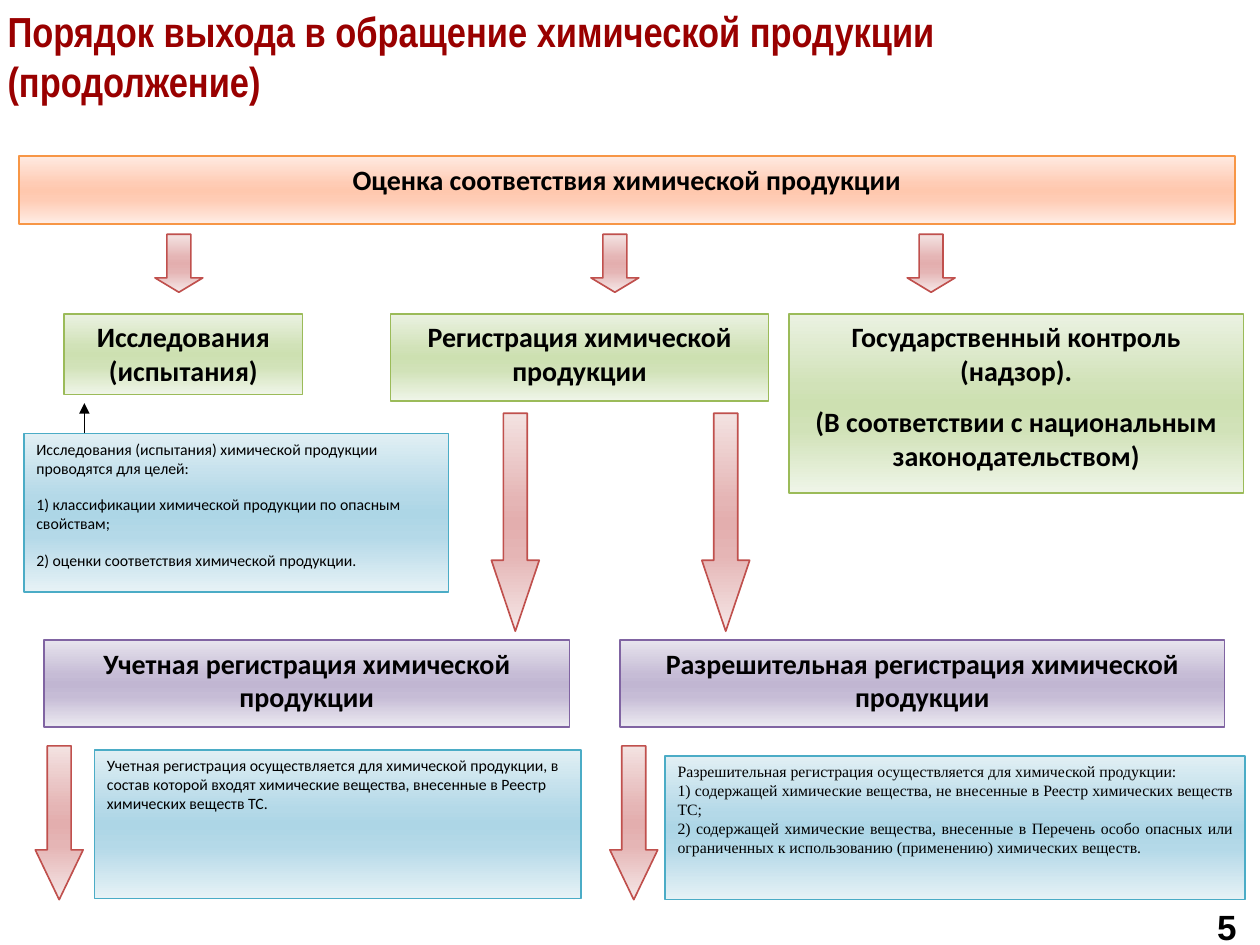
from dataclasses import dataclass
from lxml.etree import SubElement
from pptx import Presentation
from pptx.dml.color import RGBColor
from pptx.enum.shapes import MSO_CONNECTOR, MSO_SHAPE
from pptx.enum.text import MSO_ANCHOR, MSO_AUTO_SIZE, PP_ALIGN
from pptx.oxml.ns import qn
from pptx.util import Inches, Pt


@dataclass(frozen=True)
class Tone:
    line: str
    stops: tuple


@dataclass(frozen=True)
class Theme:
    orange: Tone = Tone("F79646", ("FFEAE1", "FFCCB5", "FFC8AE", "FFCCB5", "FFEEE7"))
    red: Tone = Tone("C0504D", ("F3E2E1", "E5B5B5", "E3AEAE", "E5B5B5", "F5E8E8"))
    green: Tone = Tone("9BBB59", ("EBF2E2", "D1E2B8", "CDE0B1", "D1E2B8", "EFF5E8"))
    purple: Tone = Tone("8064A2", ("E7E4ED", "C6BCD6", "C1B6D2", "C6BCD6", "ECEAF1"))
    blue: Tone = Tone("4BACC6", ("E1EFF4", "B4D9E8", "ADD6E6", "B4D9E8", "E7F2F6"))
    stop_positions: tuple = (0, 40, 50, 65, 100)
    title_color: str = "990000"
    ink: str = "000000"
    title_font: str = "Arial Narrow"
    body_font: str = "Calibri"
    legal_font: str = "Times New Roman"
    number_font: str = "Arial"
    title_size: int = 24
    number_size: int = 20
    heading_size: int = 16
    note_size: int = 9
    paragraph_gap: int = 10
    outline: float = 0.94
    thin_line: float = 0.75


class SlideBuilder:
    def __init__(self, slide, theme):
        self.slide = slide
        self.theme = theme

    def add_run(self, paragraph, text, size, font, color, bold):
        run = paragraph.add_run()
        run.text = text
        run.font.size = Pt(size)
        run.font.name = font
        run.font.bold = bold
        run.font.color.rgb = RGBColor.from_string(color)

    def title(self, lines, left, top, width, height):
        title = self.slide.shapes.title
        title.left, title.top = Inches(left), Inches(top)
        title.width, title.height = Inches(width), Inches(height)
        frame = title.text_frame
        frame.word_wrap = True
        frame.auto_size = MSO_AUTO_SIZE.NONE
        frame.vertical_anchor = MSO_ANCHOR.MIDDLE
        paragraph = frame.paragraphs[0]
        paragraph.alignment = PP_ALIGN.LEFT
        for index, line in enumerate(lines):
            if index:
                paragraph.add_line_break()
            self.add_run(paragraph, line, self.theme.title_size, self.theme.title_font,
                         self.theme.title_color, True)

    def panel(self, kind, tone, left, top, width, height, adjustments=()):
        panel = self.slide.shapes.add_shape(
            kind, Inches(left), Inches(top), Inches(width), Inches(height))
        panel.shadow.inherit = False
        for index, value in enumerate(adjustments):
            panel.adjustments[index] = value
        panel.line.color.rgb = RGBColor.from_string(tone.line)
        panel.line.width = Pt(self.theme.outline)
        panel.fill.gradient()
        panel.fill.gradient_angle = 270
        stop_list = panel.element.spPr.find(qn("a:gradFill")).find(qn("a:gsLst"))
        for stop in list(stop_list):
            stop_list.remove(stop)
        for position, color in zip(self.theme.stop_positions, tone.stops):
            stop = SubElement(stop_list, qn("a:gs"), pos=str(position * 1000))
            SubElement(stop, qn("a:srgbClr"), val=color)
        return panel

    def add_texts(self, panel, texts, size, font, bold, alignment, gap):
        frame = panel.text_frame
        frame.word_wrap = True
        frame.vertical_anchor = MSO_ANCHOR.TOP
        for index, text in enumerate(texts):
            paragraph = frame.add_paragraph() if index else frame.paragraphs[0]
            paragraph.alignment = alignment
            paragraph.space_after = Pt(gap)
            self.add_run(paragraph, text, size, font, self.theme.ink, bold)

    def heading(self, tone, box, *texts):
        panel = self.panel(MSO_SHAPE.FLOWCHART_PROCESS, tone, *box)
        self.add_texts(panel, texts, self.theme.heading_size, self.theme.body_font,
                       True, PP_ALIGN.CENTER, self.theme.paragraph_gap)

    def note(self, kind, box, *texts, adjustments=()):
        panel = self.panel(kind, self.theme.blue, *box, adjustments)
        self.add_texts(panel, texts, self.theme.note_size, self.theme.body_font,
                       False, PP_ALIGN.LEFT, self.theme.paragraph_gap)

    def legal_note(self, box, *texts):
        panel = self.panel(MSO_SHAPE.WAVE, self.theme.blue, *box, (0, 0))
        self.add_texts(panel, texts, self.theme.note_size, self.theme.legal_font,
                       False, PP_ALIGN.JUSTIFY, 0)

    def down_arrows(self, lefts, top, height, head):
        for left in lefts:
            self.panel(MSO_SHAPE.DOWN_ARROW, self.theme.red, left, top, 0.38, height,
                       (0.5, head))

    def pointer(self, x, start, end):
        pointer = self.slide.shapes.add_connector(
            MSO_CONNECTOR.STRAIGHT, Inches(x), Inches(start), Inches(x), Inches(end))
        pointer.line.color.rgb = RGBColor.from_string(self.theme.ink)
        pointer.line.width = Pt(self.theme.thin_line)
        properties = pointer.element.spPr
        SubElement(properties.find(qn("a:ln")), qn("a:tailEnd"), type="triangle")
        SubElement(properties, qn("a:effectLst"))

    def page_number(self, text, left, top, width, height):
        number = self.slide.shapes.add_textbox(
            Inches(left), Inches(top), Inches(width), Inches(height))
        number.text_frame.margin_left = Inches(0.25)
        self.add_texts(number, [text], self.theme.number_size, self.theme.number_font,
                       True, PP_ALIGN.LEFT, 0)


def main():
    deck = Presentation()
    deck.slide_width, deck.slide_height = Inches(10), Inches(7.5)
    theme = Theme()
    page = SlideBuilder(deck.slides.add_slide(deck.slide_layouts[5]), theme)

    page.title(["Порядок выхода в обращение химической продукции", "(продолжение)"],
               -0.04, -0.03, 7.67, 0.94)
    page.heading(theme.orange, (0.15, 1.24, 9.65, 0.54),
                 "Оценка соответствия химической продукции")
    page.down_arrows((1.23, 4.69, 7.2), 1.86, 0.46, 0.3)

    page.heading(theme.green, (0.51, 2.49, 1.89, 0.64), "Исследования (испытания)")
    page.heading(theme.green, (3.1, 2.49, 3, 0.69), "Регистрация химической продукции")
    page.heading(theme.green, (6.26, 2.49, 3.61, 1.42),
                 "Государственный контроль (надзор).",
                 "(В соответствии с национальным законодательством)")

    page.note(MSO_SHAPE.RECTANGLE, (0.19, 3.44, 3.37, 1.26),
              "Исследования (испытания) химической продукции проводятся для целей:",
              "1) классификации химической продукции по опасным свойствам;",
              "2) оценки соответствия химической продукции.")
    page.pointer(0.67, 3.44, 3.2)
    page.down_arrows((3.9, 5.57), 3.28, 1.73, 1.48)

    page.heading(theme.purple, (0.35, 5.08, 4.17, 0.69),
                 "Учетная регистрация химической продукции")
    page.heading(theme.purple, (4.92, 5.08, 4.8, 0.69),
                 "Разрешительная регистрация химической продукции")
    page.down_arrows((0.28, 4.84), 5.92, 1.22, 1.04)

    page.note(MSO_SHAPE.WAVE, (0.75, 5.95, 3.86, 1.18),
              "Учетная регистрация осуществляется для химической продукции, в состав "
              "которой входят химические вещества, внесенные в Реестр химических веществ ТС.",
              adjustments=(0, 0))
    page.legal_note((5.28, 6, 4.6, 1.14),
                    "Разрешительная регистрация осуществляется для химической продукции:",
                    "1) содержащей химические вещества, не внесенные в Реестр химических "
                    "веществ ТС;",
                    "2) содержащей химические вещества, внесенные в Перечень особо опасных "
                    "или ограниченных к использованию (применению) химических веществ.")
    page.page_number("5", 9.41, 7.14, 0.59, 0.44)

    deck.save("out.pptx")


if __name__ == "__main__":
    main()
